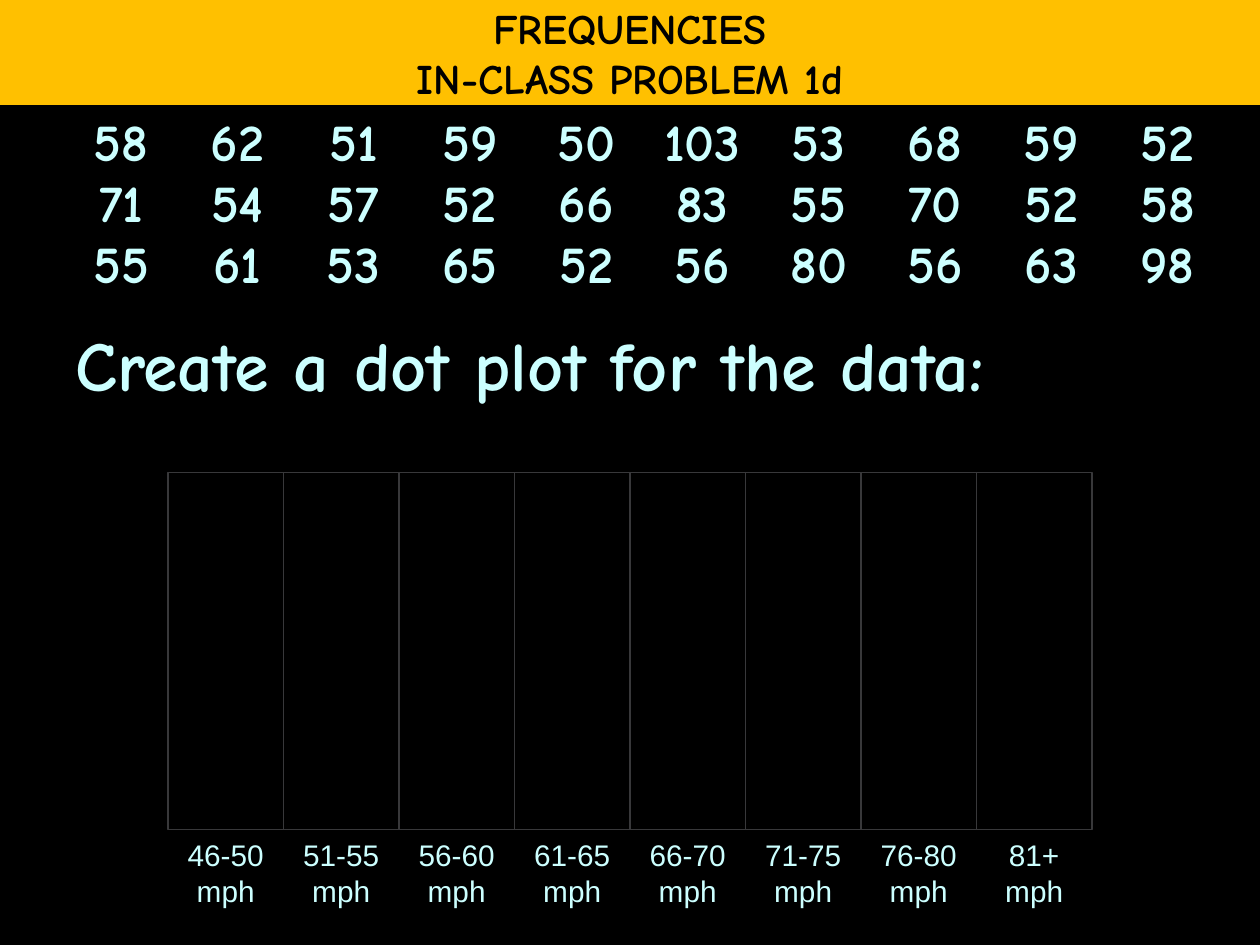
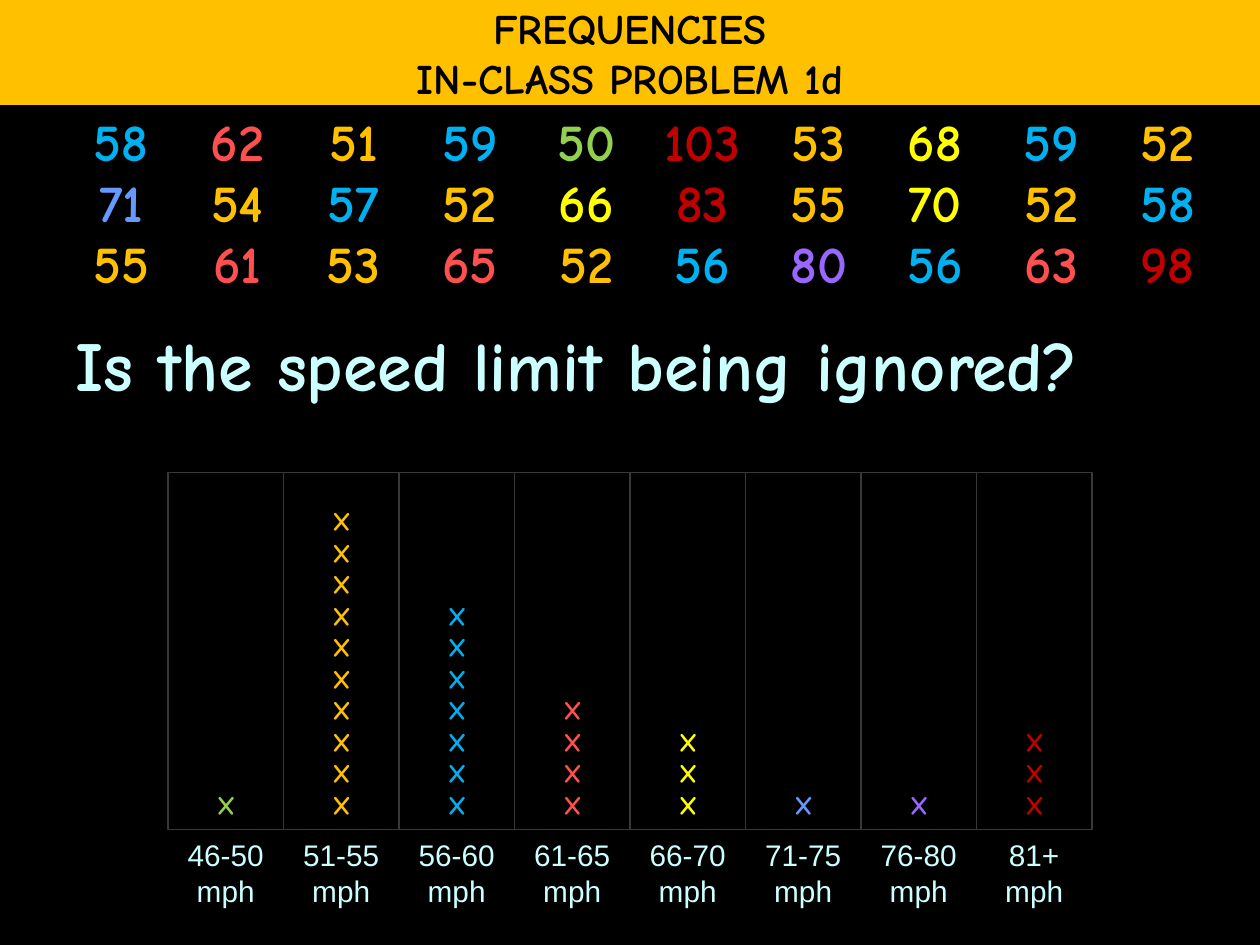
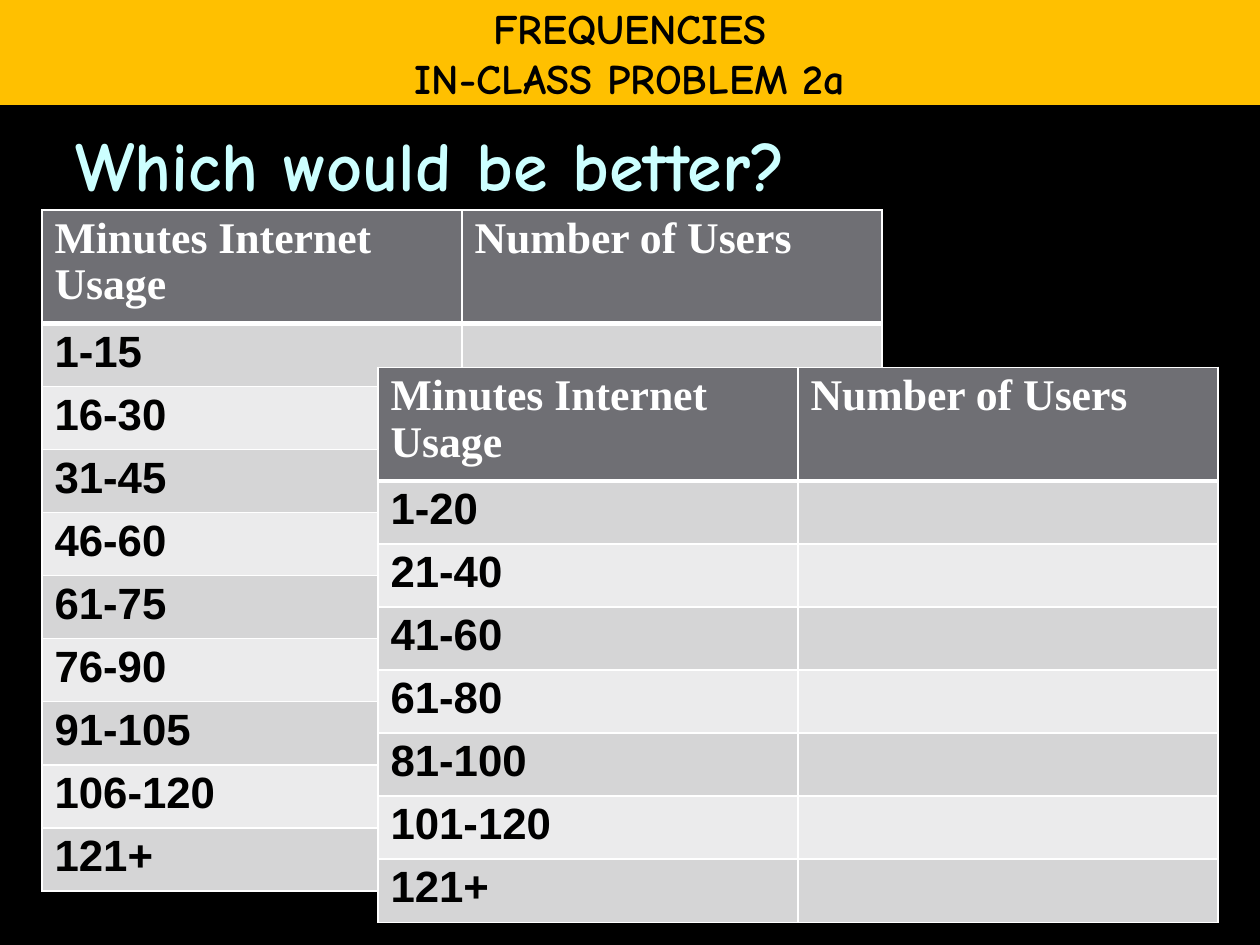
from dataclasses import dataclass

from lxml import etree
from pptx import Presentation
from pptx import util as u
from pptx.dml.color import RGBColor
from pptx.enum import shapes, text
from pptx.oxml import ns

Pt = u.Pt

# Colours
BLACK = RGBColor(0x00, 0x00, 0x00)
WHITE = RGBColor(0xFF, 0xFF, 0xFF)
GOLD = RGBColor(0xFF, 0xC0, 0x00)
ICE = RGBColor(0xCC, 0xFF, 0xFF)
EDGE = RGBColor(0x38, 0x38, 0x3A)
HEAD = RGBColor(0x6F, 0x6F, 0x74)
BANDS = (RGBColor(0xD5, 0xD5, 0xD6), RGBColor(0xEB, 0xEB, 0xEC))
GREEN = RGBColor(0x92, 0xD0, 0x50)
SKY = RGBColor(0x00, 0xB0, 0xF0)
CORAL = RGBColor(0xFF, 0x50, 0x50)
YELLOW = RGBColor(0xFF, 0xFF, 0x00)
BLUE = RGBColor(0x66, 0x99, 0xFF)
VIOLET = RGBColor(0x99, 0x66, 0xFF)
RED = RGBColor(0xC0, 0x00, 0x00)


@dataclass(frozen=True)
class Style:
    size: float
    color: RGBColor
    font: str = "Comic Neue"
    bold: bool = True
    align: text.PP_ALIGN = text.PP_ALIGN.LEFT
    pitch: float | u.Length | None = None


@dataclass(frozen=True)
class Box:
    left: float
    top: float
    width: float
    height: float

    def pts(self) -> tuple[u.Length, ...]:
        return Pt(self.left), Pt(self.top), Pt(self.width), Pt(self.height)


@dataclass(frozen=True)
class Bin:
    label: str
    color: RGBColor


@dataclass(frozen=True)
class Usage:
    left: float
    top: float
    ranges: tuple[str, ...]


MID = text.PP_ALIGN.CENTER
TITLE = Style(24, BLACK, align=MID)
ASK = Style(40, ICE)
LABEL = Style(17, ICE, "Arial", False, MID, Pt(20.5))
TIGHT = 0.96

# Speeds in mph and the bins they fall in
SPEEDS = (
    (58, 62, 51, 59, 50, 103, 53, 68, 59, 52),
    (71, 54, 57, 52, 66, 83, 55, 70, 52, 58),
    (55, 61, 53, 65, 52, 56, 80, 56, 63, 98),
)
FIRST, STEP = 46, 5
BINS = (
    Bin("46-50", GREEN), Bin("51-55", GOLD), Bin("56-60", SKY),
    Bin("61-65", CORAL), Bin("66-70", YELLOW), Bin("71-75", BLUE),
    Bin("76-80", VIOLET), Bin("81+", RED),
)
PLOT = Box(96, 270, 66, 204)  # first bin of the plot

USAGES = (
    Usage(24, 120, ("1-15", "16-30", "31-45", "46-60", "61-75", "76-90",
                    "91-105", "106-120", "121+")),
    Usage(216, 210, ("1-20", "21-40", "41-60", "61-80", "81-100",
                     "101-120", "121+")),
)


def find_bin(speed: int) -> Bin:
    return BINS[min((speed - FIRST) // STEP, len(BINS) - 1)]


def write(frame, lines: list[str], style: Style) -> None:
    """Fill a text frame, one paragraph per line."""
    for i, line in enumerate(lines):
        para = frame.paragraphs[0] if i == 0 else frame.add_paragraph()
        para.alignment = style.align
        if style.pitch:
            para.line_spacing = style.pitch
        run = para.add_run()
        run.text = line
        font = run.font
        font.name, font.size, font.bold = style.font, Pt(style.size), style.bold
        font.color.rgb = style.color


def add_text(slide, box: Box, lines: list[str], style: Style,
             inset: bool = True) -> None:
    frame = slide.shapes.add_textbox(*box.pts()).text_frame
    frame.word_wrap = True
    if not inset:
        frame.margin_left = frame.margin_right = 0
        frame.margin_top = frame.margin_bottom = 0
    write(frame, lines, style)


def add_edges(cell, color: RGBColor, top: float = 1, base: float = 1) -> None:
    """Draw the four cell borders; call before the cell is filled."""
    props = cell._tc.get_or_add_tcPr()
    for side, width in (("L", 1), ("R", 1), ("T", top), ("B", base)):
        line = etree.SubElement(props, ns.qn(f"a:ln{side}"), w=str(Pt(width)))
        fill = etree.SubElement(line, ns.qn("a:solidFill"))
        etree.SubElement(fill, ns.qn("a:srgbClr"), val=str(color))


def add_grid(slide, box: Box, rows: int, cols: int):
    table = slide.shapes.add_table(rows, cols, *box.pts()).table
    for col in table.columns:
        col.width = Pt(box.width / cols)
    return table


# Parts shared by the slides
def add_page(prs, code: str, ask: str, top: float):
    """Start a slide with its title band and question."""
    slide = prs.slides.add_slide(prs.slide_layouts[5])
    band = slide.shapes.title
    band.left, band.top, band.width, band.height = Box(0, 0, 720, 60).pts()
    band.fill.solid()
    band.fill.fore_color.rgb = GOLD
    frame = band.text_frame
    frame.auto_size = text.MSO_AUTO_SIZE.NONE
    frame.word_wrap = False
    frame.vertical_anchor = text.MSO_ANCHOR.MIDDLE
    write(frame, ["FREQUENCIES", f"IN-CLASS PROBLEM {code}"], TITLE)
    add_text(slide, Box(36, top, 684, 56), [ask], ASK)
    return slide


def add_speeds(slide, tinted: bool) -> None:
    table = add_grid(slide, Box(36, 66, 664.6, 103.5), len(SPEEDS), len(SPEEDS[0]))
    for r, row in enumerate(SPEEDS):
        for c, speed in enumerate(row):
            cell = table.cell(r, c)
            add_edges(cell, BLACK)
            cell.fill.background()
            cell.margin_left = cell.margin_right = Pt(5)
            cell.margin_top = cell.margin_bottom = 0
            color = find_bin(speed).color if tinted else ICE
            write(cell.text_frame, [str(speed)],
                  Style(30, color, align=MID, pitch=TIGHT))


def add_plot(slide, marked: bool) -> None:
    """Draw the bins; turned upside down, their marks stack from the base."""
    hits = [find_bin(speed) for row in SPEEDS for speed in row]
    for i, item in enumerate(BINS):
        left = PLOT.left + i * PLOT.width
        box = Box(left, PLOT.top, PLOT.width, PLOT.height)
        bar = slide.shapes.add_shape(shapes.MSO_SHAPE.RECTANGLE, *box.pts())
        bar.rotation = 180
        bar.shadow.inherit = False
        bar.fill.background()
        bar.line.color.rgb = EDGE
        bar.line.width = Pt(0.75)
        bar.text_frame.vertical_anchor = text.MSO_ANCHOR.TOP
        if marked:
            write(bar.text_frame, ["X"] * hits.count(item),
                  Style(15, item.color, align=MID))
        under = Box(left, PLOT.top + PLOT.height + 4, PLOT.width, 42)
        add_text(slide, under, [item.label, "mph"], LABEL, inset=False)


def add_usage(slide, usage: Usage) -> None:
    rows = [("Minutes Internet Usage", "Number of Users")]
    rows += [(span, "") for span in usage.ranges]
    box = Box(usage.left, usage.top, 480, 35 * len(rows))
    table = add_grid(slide, box, len(rows), 2)
    table.rows[0].height = Pt(62.5)
    for r, row in enumerate(rows):
        style = (Style(25, BLACK, "Arial", pitch=TIGHT) if r
                 else Style(25, WHITE, "Times New Roman", pitch=TIGHT))
        for c, words in enumerate(row):
            cell = table.cell(r, c)
            add_edges(cell, WHITE, 3 if r == 1 else 1, 1 if r else 3)
            cell.fill.solid()
            cell.fill.fore_color.rgb = BANDS[(r - 1) % 2] if r else HEAD
            if words:
                write(cell.text_frame, [words], style)


def main() -> None:
    prs = Presentation()
    prs.slide_width, prs.slide_height = Pt(720), Pt(540)
    back = prs.slide_master.background.fill
    back.solid()
    back.fore_color.rgb = BLACK

    # Dot plot, first blank and then solved
    for ask, solved in (("Create a dot plot for the data:", False),
                        ("Is the speed limit being ignored?", True)):
        slide = add_page(prs, "1d", ask, 180)
        add_plot(slide, solved)
        add_speeds(slide, solved)

    # Two ways to group internet usage
    slide = add_page(prs, "2a", "Which would be better?", 66)
    for usage in USAGES:
        add_usage(slide, usage)

    prs.save("out.pptx")


if __name__ == "__main__":
    main()
